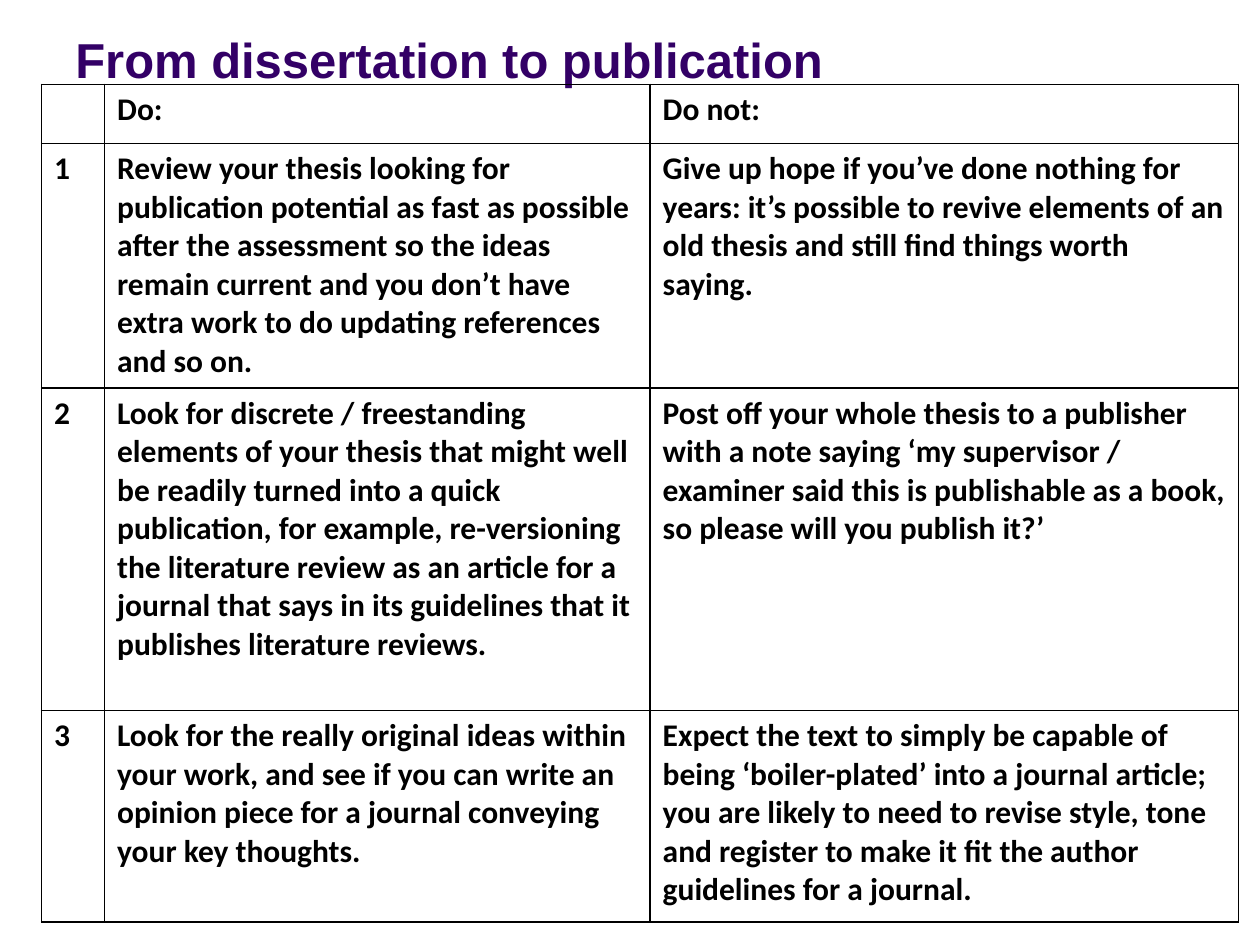
import lxml.etree
import pptx
import pptx.dml.color
import pptx.enum.text
import pptx.oxml.ns
import pptx.util

Inches = pptx.util.Inches
PURPLE = pptx.dml.color.RGBColor(0x33, 0x00, 0x66)
BLACK = pptx.dml.color.RGBColor(0x00, 0x00, 0x00)

COLUMN_WIDTHS = [0.5, 4.33, 4.67]
ROW_HEIGHTS = [0.47, 1.94, 2.56, 1.68]
ADVICE = [
    ("", "Do:", "Do not:"),
    ("1",
     "Review your thesis looking for publication potential as fast as possible "
     "after the assessment so the ideas remain current and you don’t have extra "
     "work to do updating references and so on.",
     "Give up hope if you’ve done nothing for years: it’s possible to revive "
     "elements of an old thesis and still find things worth saying."),
    ("2",
     "Look for discrete / freestanding elements of your thesis that might well be "
     "readily turned into a quick publication, for example, re-versioning the "
     "literature review as an article for a journal that says in its guidelines "
     "that it publishes literature reviews.",
     "Post off your whole thesis to a publisher with a note saying ‘my supervisor / "
     "examiner said this is publishable as a book, so please will you publish it?’"),
    ("3",
     "Look for the really original ideas within your work, and see if you can write "
     "an opinion piece for a journal conveying your key thoughts.",
     "Expect the text to simply be capable of being ‘boiler-plated’ into a journal "
     "article; you are likely to need to revise style, tone and register to make it "
     "fit the author guidelines for a journal."),
]


def set_text(tf, text, font, size, color):
    tf.text = text
    for r in tf.paragraphs[0].runs:
        r.font.name = font
        r.font.size = pptx.util.Pt(size)
        r.font.bold = True
        r.font.color.rgb = color


def add_title(s, text):
    sp = s.shapes.add_textbox(Inches(0.5), Inches(0.17), Inches(8.25), Inches(0.58))
    tf = sp.text_frame
    tf.word_wrap = True
    tf.vertical_anchor = pptx.enum.text.MSO_ANCHOR.BOTTOM
    set_text(tf, text, "Arial", 28, PURPLE)


def set_borders(cell, color, width):
    qn = pptx.oxml.ns.qn
    props = cell._tc.get_or_add_tcPr()
    for side in ("a:lnL", "a:lnR", "a:lnT", "a:lnB"):
        line = lxml.etree.SubElement(props, qn(side), w=str(pptx.util.Pt(width)))
        fill = lxml.etree.SubElement(line, qn("a:solidFill"))
        lxml.etree.SubElement(fill, qn("a:srgbClr"), val=str(color))


def add_advice_table(s):
    frame = s.shapes.add_table(
        len(ROW_HEIGHTS), len(COLUMN_WIDTHS), Inches(0.33), Inches(0.67),
        Inches(sum(COLUMN_WIDTHS)), Inches(sum(ROW_HEIGHTS)))
    table = frame.table
    table.first_row = False
    table.horz_banding = False
    for column, width in zip(table.columns, COLUMN_WIDTHS):
        column.width = Inches(width)
    for row, height, texts in zip(table.rows, ROW_HEIGHTS, ADVICE):
        row.height = Inches(height)
        for cell, text in zip(row.cells, texts):
            set_text(cell.text_frame, text, "Calibri", 18, BLACK)
            set_borders(cell, BLACK, 1)
            cell.fill.background()


def main():
    prs = pptx.Presentation()
    prs.slide_width = Inches(10)
    prs.slide_height = Inches(7.5)
    s = prs.slides.add_slide(prs.slide_layouts[6])
    add_title(s, "From dissertation to publication")
    add_advice_table(s)
    prs.save("out.pptx")


if __name__ == "__main__":
    main()
